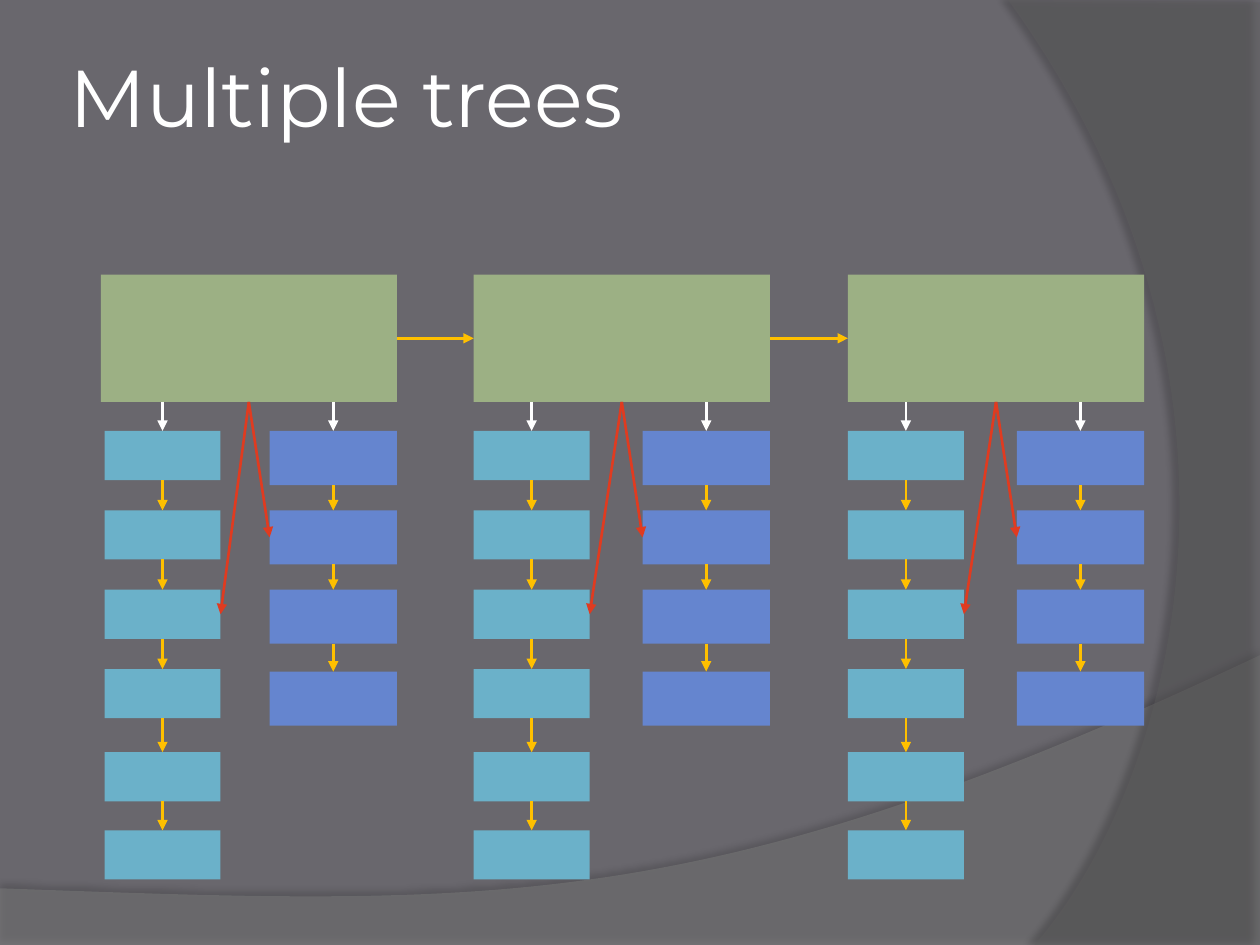
"""Build a slide of three linked trees, each with two chains of boxes."""
import pptx
import pptx.dml.color
import pptx.enum.shapes
import pptx.enum.text
import pptx.oxml.ns
import pptx.util
from lxml import etree

Inches = pptx.util.Inches
qn = pptx.oxml.ns.qn

TITLE = "Multiple trees"
BACKGROUND, WHITE, YELLOW, RED = "69676D", "FFFFFF", "FFC000", "E03B20"
TOP, LEFT, BOTTOM, RIGHT = range(4)

TREES = [
    {"root": 0.8, "long": 0.83},
    {"root": 3.76, "long": 3.76},
    {"root": 6.73, "long": 6.73},
]
ROOT = {"top": 2.18, "size": (2.35, 1.01), "fill": "9CB084"}
LONG_CHAIN = {"tops": [3.42, 4.05, 4.68, 5.31, 5.97, 6.59], "size": (0.92, 0.39), "fill": "6BB1C9"}
SHORT_CHAIN = {"tops": [3.42, 4.05, 4.68, 5.33], "size": (1.01, 0.43), "fill": "6585CF"}

WAVES = [
    {"before": [(0, 7.05), (0, 7.51), (10, 7.51), (10, 5.2)],
     "curve": [(10, 5.2), (5.59, 7.29), (3.91, 7.19), (0, 7.05)],
     "fill": "7F7F7F", "opacity": 45,
     "shadow": {"opacity": 35, "blur": 4, "distance": 3.5, "angle": 270}},
    {"before": [(10, 0.02), (10, 7.5), (8.21, 7.5)],
     "curve": [(8.21, 7.5), (9.35, 6.19), (10.18, 3), (8, 0)],
     "fill": "5E5E5E", "opacity": 40,
     "shadow": {"opacity": 45, "blur": 4, "distance": 4, "angle": 180}},
]
CURVE_STEPS = 60


def color(hex_text):
    return pptx.dml.color.RGBColor.from_string(hex_text)


def paint(shape, fill):
    shape.fill.solid()
    shape.fill.fore_color.rgb = color(fill)
    shape.line.fill.background()
    shape.shadow.inherit = False


def add_alpha(color_element, percent):
    etree.SubElement(color_element, qn("a:alpha"), val=str(percent * 1000))


def curve_points(controls):
    for step in range(1, CURVE_STEPS + 1):
        t = step / CURVE_STEPS
        weights = ((1 - t) ** 3, 3 * t * (1 - t) ** 2, 3 * t ** 2 * (1 - t), t ** 3)
        yield tuple(sum(w * point[axis] for w, point in zip(weights, controls)) for axis in (0, 1))


def add_wave(page, wave):
    points = [(Inches(x), Inches(y)) for x, y in wave["before"] + list(curve_points(wave["curve"]))]
    builder = page.shapes.build_freeform(*points[0])
    builder.add_line_segments(points[1:], close=True)
    shape = builder.convert_to_shape()
    paint(shape, wave["fill"])
    properties = shape.element.spPr
    add_alpha(properties.find(qn("a:solidFill")).find(qn("a:srgbClr")), wave["opacity"])
    shadow = wave["shadow"]
    outer = etree.SubElement(
        properties.find(qn("a:effectLst")), qn("a:outerShdw"),
        blurRad=str(pptx.util.Pt(shadow["blur"])), dist=str(pptx.util.Pt(shadow["distance"])),
        dir=str(shadow["angle"] * 60000))
    add_alpha(etree.SubElement(outer, qn("a:srgbClr"), val="000000"), shadow["opacity"])


def add_box(page, left, top, kind):
    width, height = kind["size"]
    box = page.shapes.add_shape(
        pptx.enum.shapes.MSO_SHAPE.RECTANGLE,
        Inches(left), Inches(top), Inches(width), Inches(height))
    paint(box, kind["fill"])
    return box


def add_arrow(page, hue, start, start_side, end, end_side, start_x=None):
    arrow = page.shapes.add_connector(
        pptx.enum.shapes.MSO_CONNECTOR.STRAIGHT, start_x or 0, start.top + start.height, 0, 0)
    if start_x is None:
        arrow.begin_connect(start, start_side)
    arrow.end_connect(end, end_side)
    arrow.line.color.rgb = color(hue)
    arrow.line.width = pptx.util.Pt(1.5)
    properties = arrow.element.spPr
    etree.SubElement(properties.find(qn("a:ln")), qn("a:tailEnd"), type="triangle")
    etree.SubElement(properties, qn("a:effectLst"))


def add_chain(page, root, left, kind):
    boxes = [add_box(page, left, top, kind) for top in kind["tops"]]
    add_arrow(page, WHITE, root, BOTTOM, boxes[0], TOP, boxes[0].left + boxes[0].width // 2)
    for upper, lower in zip(boxes, boxes[1:]):
        add_arrow(page, YELLOW, upper, BOTTOM, lower, TOP)
    return boxes


def add_tree(page, tree):
    root = add_box(page, tree["root"], ROOT["top"], ROOT)
    short_left = tree["root"] + ROOT["size"][0] - SHORT_CHAIN["size"][0]
    long_boxes = add_chain(page, root, tree["long"], LONG_CHAIN)
    short_boxes = add_chain(page, root, short_left, SHORT_CHAIN)
    add_arrow(page, RED, root, BOTTOM, long_boxes[2], RIGHT)
    add_arrow(page, RED, root, BOTTOM, short_boxes[1], LEFT)
    return root


def add_title(page):
    box = page.shapes.add_textbox(Inches(0.5), Inches(0.13), Inches(8.17), Inches(1.25))
    frame = box.text_frame
    frame.word_wrap = True
    frame.vertical_anchor = pptx.enum.text.MSO_ANCHOR.MIDDLE
    frame.margin_left = frame.margin_right = Inches(0.05)
    frame.margin_top = frame.margin_bottom = Inches(0.05)
    span = frame.paragraphs[0].add_run()
    span.text = TITLE
    span.font.name = "Montserrat"
    span.font.size = pptx.util.Pt(46)
    span.font.color.rgb = color(WHITE)


def main():
    deck = pptx.Presentation()
    deck.slide_width, deck.slide_height = Inches(10), Inches(7.5)
    page = deck.slides.add_slide(deck.slide_layouts[6])
    page.background.fill.solid()
    page.background.fill.fore_color.rgb = color(BACKGROUND)
    for wave in WAVES:
        add_wave(page, wave)
    roots = [add_tree(page, tree) for tree in TREES]
    for previous, following in zip(roots, roots[1:]):
        add_arrow(page, YELLOW, previous, RIGHT, following, LEFT)
    add_title(page)
    deck.save("out.pptx")


if __name__ == "__main__":
    main()
